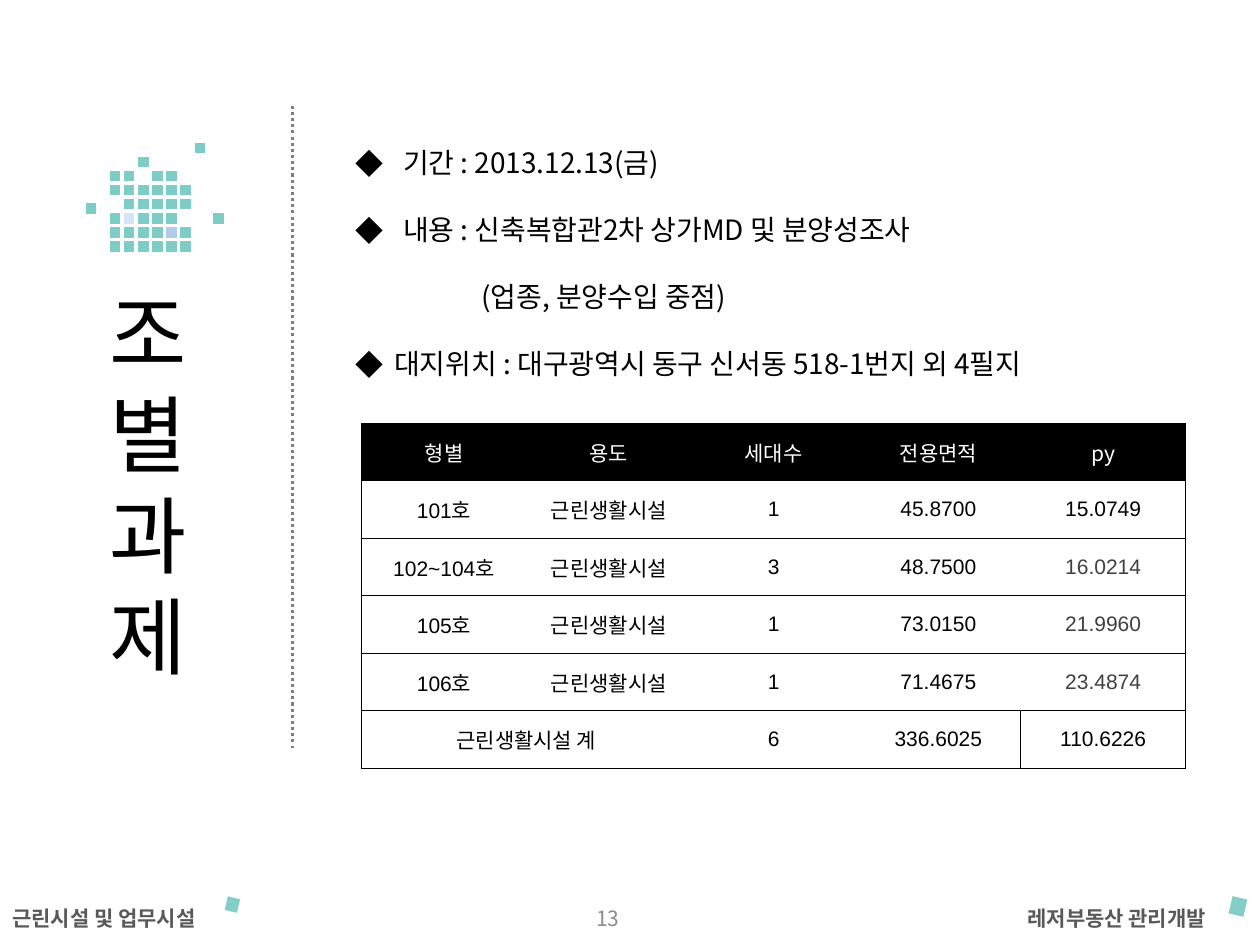
from dataclasses import dataclass

from lxml import etree
from pptx import Presentation
from pptx.dml.color import RGBColor
from pptx.enum.dml import MSO_LINE
from pptx.enum.shapes import MSO_CONNECTOR, MSO_SHAPE
from pptx.enum.text import MSO_ANCHOR, MSO_AUTO_SIZE, PP_ALIGN
from pptx.oxml.ns import qn
from pptx.util import Inches, Pt

LEFT, CENTER, RIGHT = PP_ALIGN.LEFT, PP_ALIGN.CENTER, PP_ALIGN.RIGHT
TOP, MIDDLE = MSO_ANCHOR.TOP, MSO_ANCHOR.MIDDLE


@dataclass(frozen=True)
class Theme:
    font: str = "Noto Sans CJK KR"
    number_font: str = "Arial"
    black: str = "000000"
    white: str = "FFFFFF"
    footer: str = "595959"
    page: str = "8C8C8C"
    area: str = "404040"
    divider: str = "808080"
    teal: str = "44B6AB"
    blue: str = "8EB4E3"
    pale_blue: str = "C6D9F1"
    title_size: int = 48
    body_size: int = 16
    small_size: int = 12


THEME = Theme()


def write_text(frame, lines, size=THEME.small_size, color=THEME.black,
               font=THEME.font, bold=False, align=LEFT, anchor=MIDDLE, spacing=None):
    frame.word_wrap = True
    frame.vertical_anchor = anchor
    frame.text = lines
    for paragraph in frame.paragraphs:
        paragraph.alignment = align
        paragraph.space_before = Pt(0)
        if spacing:
            paragraph.line_spacing = Pt(spacing)
        run = paragraph.runs[0]
        run.font.size = Pt(size)
        run.font.bold = bold
        run.font.name = font
        run.font.color.rgb = RGBColor.from_string(color)
        east_asian = etree.SubElement(run.font._element, qn("a:ea"))
        east_asian.set("typeface", THEME.font)


def add_tile(left, top, width, height, color=THEME.teal, opacity=69, rotation=0):
    tile = slide.shapes.add_shape(MSO_SHAPE.RECTANGLE, Inches(left), Inches(top),
                                  Inches(width), Inches(height))
    tile.shadow.inherit = False
    tile.rotation = rotation
    tile.fill.solid()
    tile.fill.fore_color.rgb = RGBColor.from_string(color)
    fill_color = tile._element.spPr.find(qn("a:solidFill"))[0]
    etree.SubElement(fill_color, qn("a:alpha")).set("val", str(opacity * 1000))
    tile.line.color.rgb = RGBColor.from_string(THEME.white)
    tile.line.width = Pt(2)


prs = Presentation()
prs.slide_width, prs.slide_height = Inches(10), Inches(7.5)
slide = prs.slides.add_slide(prs.slide_layouts[1])

# Footer
footers = [
    ("근린시설 및 업무시설", 0, 1.93, THEME.footer, True, LEFT),
    ("레저부동산 관리개발", 7.42, 2.25, THEME.footer, True, RIGHT),
    ("13", 3.66, 2.33, THEME.page, False, CENTER),
]
for words, left, width, color, bold, align in footers:
    footer = slide.shapes.add_textbox(Inches(left), Inches(7.14), Inches(width), Inches(0.3))
    write_text(footer.text_frame, words, color=color, bold=bold, align=align)
add_tile(1.78, 7.11, 0.13, 0.14, opacity=66, rotation=13.3)
add_tile(9.75, 7.11, 0.15, 0.17, opacity=66, rotation=13.3)

# Mosaic above the title
MOSAIC = [
    "......T",
    "..T....",
    "TT.TT..",
    "TTTTTT.",
    ".TTTTT.",
    "TLTTT..",
    "TTTTBT.",
    "TTTTTT.",
]
MOSAIC_COLORS = {"T": THEME.teal, "L": THEME.pale_blue, "B": THEME.blue}
TILE = 0.11
PITCH = 0.67 / 6
for row, marks in enumerate(MOSAIC):
    for column, mark in enumerate(marks):
        if mark in MOSAIC_COLORS:
            add_tile(0.86 + column * PITCH, 1.12 + row * PITCH, TILE, TILE,
                     color=MOSAIC_COLORS[mark])
for left, top in [(0.67, 1.6), (1.68, 1.68)]:
    add_tile(left, top, TILE, TILE)

# Divider
divider = slide.shapes.add_connector(MSO_CONNECTOR.STRAIGHT, Inches(2.32), Inches(0.84),
                                     Inches(2.32), Inches(5.94))
divider.line.color.rgb = RGBColor.from_string(THEME.divider)
divider.line.width = Pt(1.75)
divider.line.dash_style = MSO_LINE.ROUND_DOT
etree.SubElement(divider._element.spPr, qn("a:effectLst"))

# Title and list
title, details = slide.placeholders
title.left, title.top, title.width, title.height = map(Inches, (0.77, 2.18, 1.24, 3.33))
write_text(title.text_frame, "조\n별\n과\n제", size=THEME.title_size, anchor=TOP, spacing=57.7)
title.text_frame.auto_size = MSO_AUTO_SIZE.NONE

DETAILS = [
    ("기간 : 2013.12.13(금)", 0.38, "◆"),
    ("내용 : 신축복합관2차 상가MD 및 분양성조사", 0.38, "◆"),
    ("(업종, 분양수입 중점)", 1, None),
    ("대지위치 : 대구광역시 동구 신서동 518-1번지 외 4필지", 0.31, "◆"),
]
details.left, details.top, details.width, details.height = map(Inches, (2.72, 0.84, 6.85, 2.26))
write_text(details.text_frame, "\n".join(words for words, _, _ in DETAILS),
           size=THEME.body_size, anchor=TOP, spacing=38.3)
details.text_frame.auto_size = MSO_AUTO_SIZE.NONE
for paragraph, (_, indent, bullet) in zip(details.text_frame.paragraphs, DETAILS):
    properties = paragraph._p.get_or_add_pPr()
    properties.set("marL", str(Inches(indent)))
    properties.set("indent", str(-Inches(indent) if bullet else 0))
    if bullet:
        etree.SubElement(properties, qn("a:buFont")).set("typeface", THEME.font)
        etree.SubElement(properties, qn("a:buChar")).set("char", bullet)
    else:
        paragraph.level = 1
        etree.SubElement(properties, qn("a:buNone"))

# Unit table
UNITS = [
    ["형별", "용도", "세대수", "전용면적", "py"],
    ["101호", "근린생활시설", "1", "45.8700", "15.0749"],
    ["102~104호", "근린생활시설", "3", "48.7500", "16.0214"],
    ["105호", "근린생활시설", "1", "73.0150", "21.9960"],
    ["106호", "근린생활시설", "1", "71.4675", "23.4874"],
    ["근린생활시설 계", "", "6", "336.6025", "110.6226"],
]
last_row, last_column = len(UNITS) - 1, len(UNITS[0]) - 1
units = slide.shapes.add_table(len(UNITS), len(UNITS[0]), Inches(2.87), Inches(3.36),
                               Inches(6.54), Inches(2.74)).table
units.first_row = units.horz_banding = False
units.cell(last_row, 0).merge(units.cell(last_row, 1))
for row, values in enumerate(UNITS):
    for column, value in enumerate(values):
        cell = units.cell(row, column)
        is_header = row == 0
        if value:
            is_grey = column == last_column and 1 < row < last_row
            color = THEME.white if is_header else THEME.area if is_grey else THEME.black
            write_text(cell.text_frame, value, color=color, align=CENTER,
                       font=THEME.font if is_header else THEME.number_font)
            cell.vertical_anchor = MIDDLE
        borders = {
            "a:lnL": column == 0 or (row, column) == (last_row, last_column),
            "a:lnR": column == last_column or (row, column) == (last_row, last_column - 1),
            "a:lnT": True,
            "a:lnB": True,
        }
        cell_properties = cell._tc.get_or_add_tcPr()
        for side, visible in borders.items():
            border = etree.SubElement(cell_properties, qn(side), w=str(Pt(0.75)))
            if visible:
                ink = etree.SubElement(border, qn("a:solidFill"))
                etree.SubElement(ink, qn("a:srgbClr"), val=THEME.black)
            else:
                etree.SubElement(border, qn("a:noFill"))
        cell.fill.solid()
        cell.fill.fore_color.rgb = RGBColor.from_string(
            THEME.black if is_header else THEME.white)

prs.save("out.pptx")
